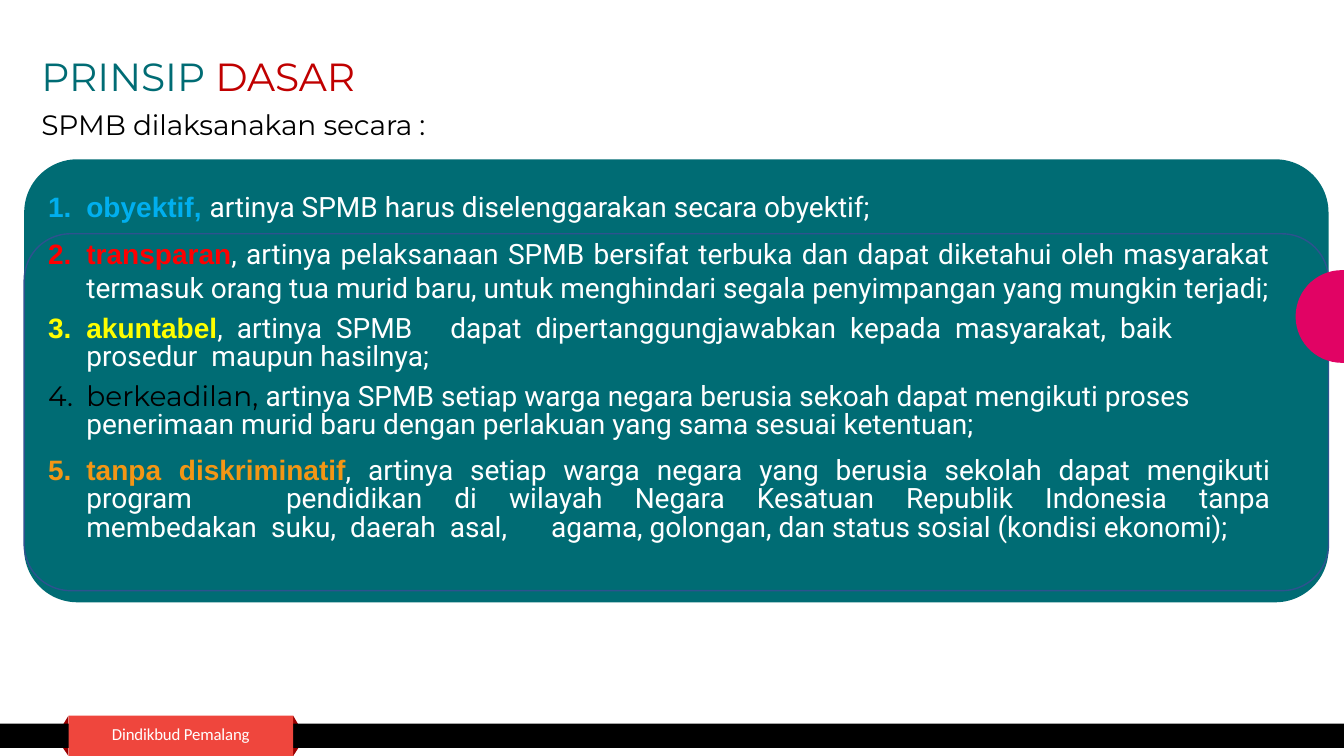
import math

from lxml import etree
from pptx import Presentation
from pptx.dml.color import RGBColor
from pptx.enum.shapes import MSO_SHAPE
from pptx.enum.text import MSO_ANCHOR, MSO_AUTO_SIZE, PP_ALIGN
from pptx.oxml.ns import qn
from pptx.util import Inches, Pt

RECT, ROUNDED = MSO_SHAPE.RECTANGLE, MSO_SHAPE.ROUNDED_RECTANGLE
LEFT, JUSTIFY = PP_ALIGN.LEFT, PP_ALIGN.JUSTIFY
COLORS = {
    "teal": "006C74", "crimson": "C00000", "black": "000000", "white": "FFFFFF",
    "fold": "990000", "ribbon": "EF463D", "outline": "2E528F", "pink": "E10364",
    "blue": "00AFEF", "red": "FF0000", "yellow": "FFFF00", "orange": "F39615",
}
WIDE = 500  # extra width of a stretched word gap, in hundredths of a point


class PrincipleSlide:
    """Places elements by percentages of the slide's width and height."""

    def __init__(self, prs):
        self.prs = prs
        self.slide = prs.slides.add_slide(prs.slide_layouts[1])
        self.title, self.body = self.slide.placeholders

    def x(self, share):
        return round(self.prs.slide_width * share / 100)

    def y(self, share):
        return round(self.prs.slide_height * share / 100)

    def box(self, left, top, width, height):
        return self.x(left), self.y(top), self.x(width), self.y(height)

    def color(self, name):
        return RGBColor.from_string(COLORS[name])

    def paint(self, shape, fill=None, line=None):
        shape.shadow.inherit = False
        if fill:
            shape.fill.solid()
            shape.fill.fore_color.rgb = self.color(fill)
        else:
            shape.fill.background()
        if line:
            shape.line.color.rgb = self.color(line)
            shape.line.width = Pt(1)
        else:
            shape.line.fill.background()

    def preset(self, kind, area, fill=None, line=None, corner=None):
        shape = self.slide.shapes.add_shape(kind, *self.box(*area))
        if corner:
            shape.adjustments[0] = corner
        self.paint(shape, fill, line)

    def outline(self, contours, fill):
        first, *others = [[(self.x(px), self.y(py)) for px, py in c] for c in contours]
        builder = self.slide.shapes.build_freeform(*first[0])
        builder.add_line_segments(first[1:])
        for contour in others:
            builder.move_to(*contour[0])
            builder.add_line_segments(contour[1:])
        self.paint(builder.convert_to_shape(), fill)

    def frame(self, shape, area, inset=0.0, wrap=True):
        shape.left, shape.top, shape.width, shape.height = self.box(*area)
        frame = shape.text_frame
        frame.margin_left = frame.margin_right = frame.margin_bottom = 0
        frame.margin_top = Inches(inset)
        frame.vertical_anchor = MSO_ANCHOR.TOP
        frame.auto_size = MSO_AUTO_SIZE.NONE
        frame.word_wrap = wrap
        return frame

    def textbox(self, area, inset=0.0, wrap=True):
        return self.frame(self.slide.shapes.add_textbox(0, 0, 0, 0), area, inset, wrap)

    def run(self, paragraph, text, font, size, color, bold=False, spacing=0):
        run = paragraph.add_run()
        run.text = text
        run.font.name, run.font.size, run.font.bold = font, Pt(size), bold
        run.font.color.rgb = self.color(color)
        run._r.get_or_add_rPr().set("spc", str(spacing))

    def stretched(self, paragraph, text, *style):
        """Adds the words of a text with widened gaps between them."""
        for index, word in enumerate(text.split(" ")):
            if index:
                self.run(paragraph, " ", *style, spacing=WIDE)
            if word:
                self.run(paragraph, word, *style)

    def number(self, paragraph, tabs):
        props = paragraph._p.get_or_add_pPr()
        props.set("marL", str(Inches(0.39)))
        props.set("indent", str(Inches(-0.38)))
        etree.SubElement(props, qn("a:buFont"), typeface="+mj-lt")
        etree.SubElement(props, qn("a:buAutoNum"), type="arabicPeriod")
        stops = etree.SubElement(props, qn("a:tabLst"))
        for stop in tabs:
            etree.SubElement(stops, qn("a:tab"), pos=str(Inches(stop)), algn="l")


# term, its font, its colour, explanation, stretched gaps, alignment, line spacing, space before, tabs
TERM, PLAIN, TEXT = "Arial", "Montserrat", ("Roboto", 20, "white")
PRINCIPLES = [
    ("obyektif, ", TERM, "blue", [("artinya SPMB harus diselenggarakan secara obyektif;", False)],
     LEFT, 1.0, 0, [0.39]),
    ("transparan", TERM, "red",
     [(", artinya pelaksanaan SPMB bersifat terbuka dan dapat diketahui oleh masyarakat "
       "termasuk orang tua murid baru, untuk menghindari segala penyimpangan yang mungkin "
       "terjadi;", False)],
     JUSTIFY, 1.0, 9.7, [0.39]),
    ("akuntabel", TERM, "yellow",
     [(", artinya SPMB\tdapat dipertanggungjawabkan kepada masyarakat, baik prosedur maupun", True),
      (" hasilnya;", False)],
     LEFT, Pt(20), 8.8, [0.39, 4]),
    ("berkeadilan, ", PLAIN, "black",
     [("artinya SPMB setiap warga negara berusia sekoah dapat mengikuti proses penerimaan "
       "murid baru dengan perlakuan yang sama sesuai ketentuan;", False)],
     LEFT, Pt(20), 8.8, [0.39]),
    ("tanpa diskriminatif", TERM, "orange",
     [(", artinya setiap warga negara yang berusia sekolah dapat mengikuti program\tpendidikan "
       "di wilayah Negara Kesatuan Republik Indonesia tanpa membedakan suku, daerah asal,", True),
      ("\tagama, golongan, dan status sosial (kondisi ekonomi);", False)],
     JUSTIFY, 0.85, 11.9, [0.39, 2.37, 5]),
]


def main():
    prs = Presentation()
    prs.slide_width, prs.slide_height = Inches(13.33), Inches(7.5)
    page = PrincipleSlide(prs)

    heading = page.frame(page.title, (3.08, 6.8, 25.57, 6.53), 0.01).paragraphs[0]
    heading.alignment = LEFT
    page.run(heading, "PRINSIP ", "Montserrat", 28, "teal")
    page.run(heading, "DASAR", "Montserrat", 28, "crimson", spacing=-10)

    lead = page.textbox((3.08, 14.13, 46.65, 4.67), 0.06).paragraphs[0]
    lead.line_spacing = Pt(20.4)
    page.run(lead, "SPMB dilaksanakan secara :", "Montserrat", 20, "black", spacing=-10)

    ribbon_left, ribbon_right, ribbon_top = 5.1, 21.82, 94.67
    folds = [[(edge, ribbon_top), (tip, 97.47), (edge, 100), (edge, ribbon_top)]
             for edge, tip in ((ribbon_left, 4.13), (ribbon_right, 22.73))]
    page.outline(folds, "fold")
    page.preset(RECT, (0, 95.73, 100, 3.2), "black")
    page.preset(RECT, (ribbon_left, ribbon_top, ribbon_right - ribbon_left, 100 - ribbon_top),
                "ribbon")

    page.preset(ROUNDED, (1.8, 21.07, 97.05, 58.6), "teal", corner=0.12)
    page.preset(ROUNDED, (1.8, 30.93, 97.05, 47.2), line="outline", corner=0.13)

    principles = page.frame(page.body, (3.5, 23.33, 91, 57.47), 0.13)
    for index, (term, font, color, parts, align, leading, before, tabs) in enumerate(PRINCIPLES):
        item = principles.add_paragraph() if index else principles.paragraphs[0]
        item.alignment, item.line_spacing, item.space_before = align, leading, Pt(before)
        page.number(item, tabs)
        add_term = page.stretched if align == JUSTIFY else page.run
        add_term(item, term, font, 20, color, font == TERM)
        for text, wide in parts:
            add_text = page.stretched if wide else page.run
            add_text(item, text, *TEXT)
    # The list sits above the panel
    page.slide.shapes._spTree.append(page.body._element)

    arc = [(99.85 - 3.45 * math.sin(math.radians(a)), 41.87 - 6.13 * math.cos(math.radians(a)))
           for a in range(0, 181, 6)]
    page.outline([[(100, 35.74), *arc, (100, 48), (100, 35.74)]], "pink")

    office = page.textbox((8.33, 96.13, 10.8, 2.27), wrap=False).paragraphs[0]
    office.line_spacing = Pt(12.4)
    page.run(office, "Dindikbud Pemalang", "Calibri", 12, "white", spacing=-10)

    prs.save("out.pptx")


if __name__ == "__main__":
    main()
